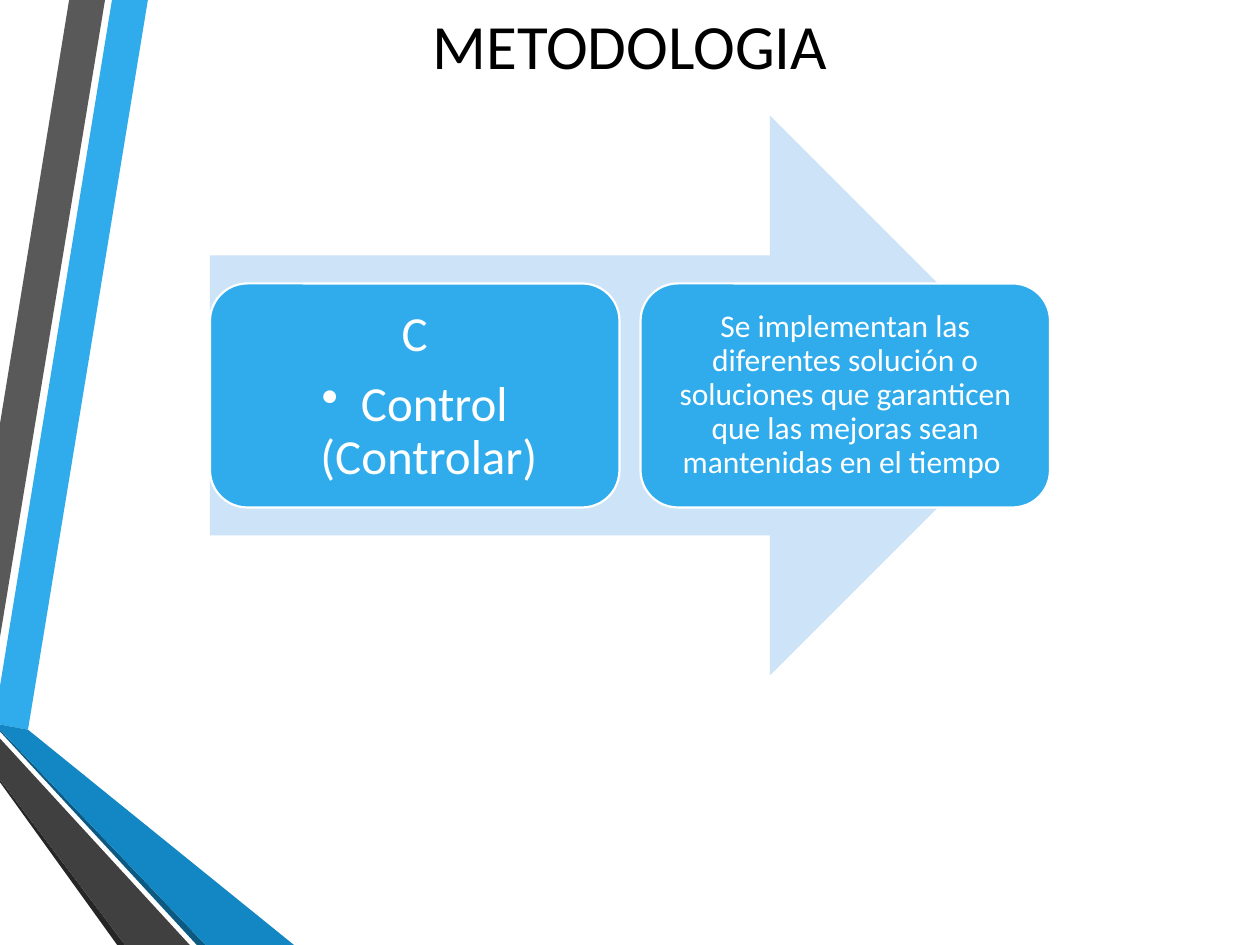
from lxml.etree import SubElement
from pptx import Presentation
from pptx.dml.color import RGBColor
from pptx.enum.shapes import MSO_SHAPE as Preset
from pptx.enum.text import MSO_ANCHOR as Anchor, PP_ALIGN as Align
from pptx.oxml.ns import qn
from pptx.util import Pt

WHITE = RGBColor(0xFF, 0xFF, 0xFF)
BLACK = RGBColor(0x00, 0x00, 0x00)
BLUE = RGBColor(0x30, 0xAC, 0xEC)
MID_BLUE = RGBColor(0x12, 0x87, 0xC3)
DARK_BLUE = RGBColor(0x0C, 0x5A, 0x82)
PALE_BLUE = RGBColor(0xCD, 0xE3, 0xF8)
GRAY = RGBColor(0x59, 0x59, 0x59)
DARK_GRAY = RGBColor(0x40, 0x40, 0x40)
NEAR_BLACK = RGBColor(0x26, 0x26, 0x26)
FONT = "Calibri"

RIBBONS = [
    (BLUE, [(0, 392), (0, 414), (16, 417), (84.5, 0), (64, 0)]),
    (GRAY, [(60, 0), (39.5, 0), (0, 242), (0, 364)]),
    (NEAR_BLACK, [(0, 445.5), (0, 447), (67, 540), (71.5, 540)]),
    (DARK_BLUE, [(0, 417), (0, 418), (112.5, 540), (117.5, 540)]),
    (MID_BLUE, [(0, 417), (117.5, 540), (168, 540), (16, 417), (0, 414)]),
    (DARK_GRAY, [(0, 445.5), (71.5, 540), (108.5, 540), (0, 422)]),
]

ARROW_LEFT, ARROW_TOP, ARROW_WIDTH, ARROW_HEIGHT = 120, 66, 480, 320
CARD_WIDTH, CARD_HEIGHT = 234, 128
CARD_TOP = ARROW_TOP + (ARROW_HEIGHT - CARD_HEIGHT) / 2
SOLUTION = (
    "Se implementan las diferentes solución o soluciones que garanticen "
    "que las mejoras sean mantenidas en el tiempo "
)


def add_ribbon(slide, color, corners):
    points = [(Pt(x), Pt(y)) for x, y in corners]
    builder = slide.shapes.build_freeform(*points[0], scale=1.0)
    builder.add_line_segments(points[1:], close=True)
    ribbon = builder.convert_to_shape()
    paint(ribbon, color)


def paint(shape, color):
    shape.shadow.inherit = False
    shape.fill.solid()
    shape.fill.fore_color.rgb = color
    shape.line.fill.background()


def add_preset(slide, preset, left, top, width, height, color):
    shape = slide.shapes.add_shape(preset, Pt(left), Pt(top), Pt(width), Pt(height))
    paint(shape, color)
    return shape


def add_card(slide, left, inset, anchor):
    card = add_preset(
        slide, Preset.ROUNDED_RECTANGLE, left, CARD_TOP, CARD_WIDTH, CARD_HEIGHT, BLUE
    )
    card.line.color.rgb = WHITE
    card.line.width = Pt(1.25)
    frame = card.text_frame
    frame.word_wrap = True
    frame.vertical_anchor = anchor
    frame.margin_left = frame.margin_right = Pt(inset)
    frame.margin_top = frame.margin_bottom = Pt(inset)
    return frame


def write(para, text, size, color):
    para.alignment = Align.CENTER
    span = para.add_run()
    span.text = text
    span.font.name = FONT
    span.font.size = Pt(size)
    span.font.color.rgb = color


def space(para, after):
    para.line_spacing = 0.9
    para.space_after = Pt(after)


def add_bullet(para, indent):
    para.level = 1
    props = para._p.get_or_add_pPr()
    props.set("marL", str(Pt(indent)))
    props.set("indent", str(Pt(-indent)))
    SubElement(props, qn("a:buChar")).set("char", "•")


def add_title(slide):
    box = slide.shapes.add_textbox(Pt(99), Pt(0), Pt(522), Pt(51))
    box.text_frame.word_wrap = True
    write(box.text_frame.paragraphs[0], "METODOLOGIA", 36, BLACK)


def add_process(slide):
    add_preset(
        slide, Preset.RIGHT_ARROW,
        ARROW_LEFT, ARROW_TOP, ARROW_WIDTH, ARROW_HEIGHT, PALE_BLUE,
    )
    control = add_card(slide, ARROW_LEFT, 8.4, Anchor.TOP)
    letter = control.paragraphs[0]
    write(letter, "C", 28, WHITE)
    space(letter, 9.8)
    step = control.add_paragraph()
    write(step, "Control (Controlar) ", 28, WHITE)
    space(step, 4.2)
    add_bullet(step, 22.5)

    right_card = ARROW_LEFT + ARROW_WIDTH - CARD_WIDTH
    solution = add_card(slide, right_card, 5.4, Anchor.MIDDLE).paragraphs[0]
    write(solution, SOLUTION, 18, WHITE)
    space(solution, 6.3)


def main():
    deck = Presentation()
    deck.slide_width, deck.slide_height = Pt(720), Pt(540)
    page = deck.slides.add_slide(deck.slide_layouts[6])
    for color, corners in RIBBONS:
        add_ribbon(page, color, corners)
    add_title(page)
    add_process(page)
    deck.save("out.pptx")


if __name__ == "__main__":
    main()
